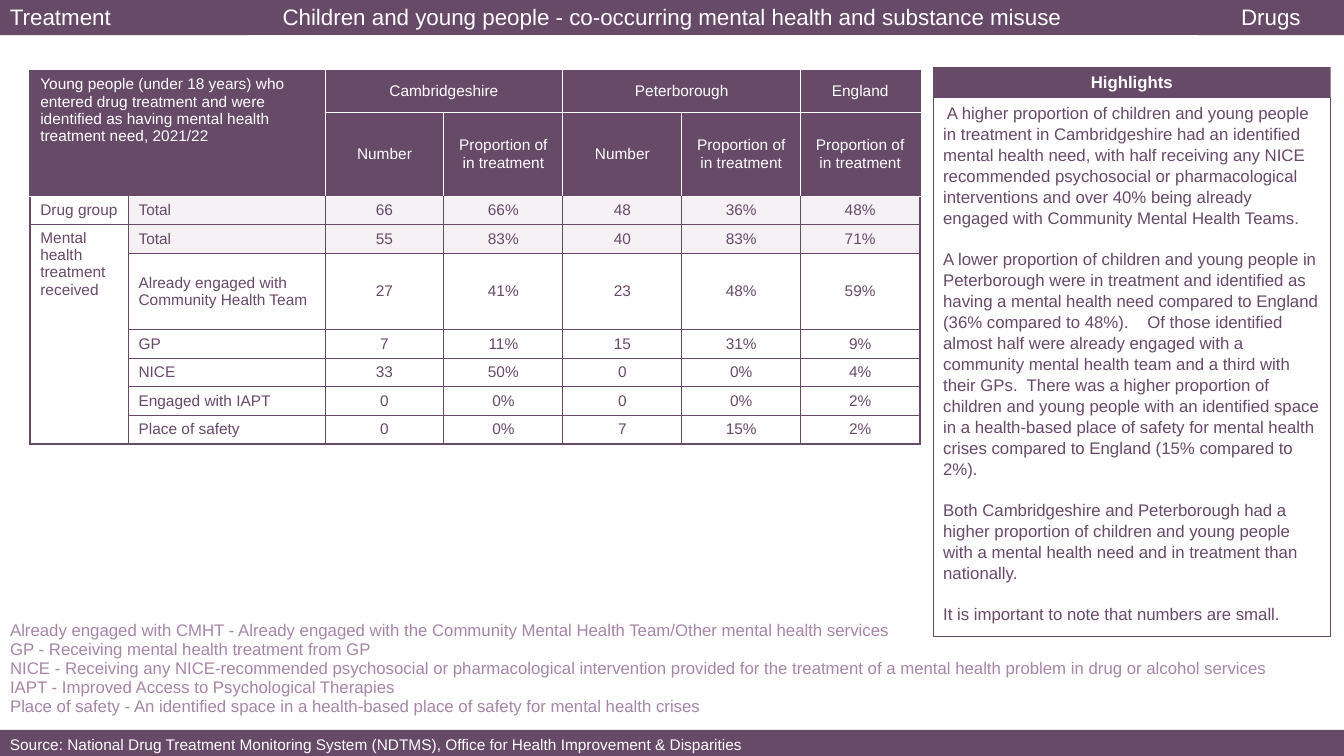
import pptx
import pptx.util
import pptx.dml.color
import pptx.enum.text
import pptx.enum.shapes
import pptx.oxml
import pptx.oxml.ns

COLOURS = {"plum": "674A68", "mauve": "A686A6", "tint": "F5F1F5", "white": "FFFFFF"}
ALIGN = pptx.enum.text.PP_ALIGN
ANCHOR = pptx.enum.text.MSO_ANCHOR
BAR = {"colour": "white", "size": 16}
THIN, THICK = 0.75, 1.5


def rgb(colour):
    return pptx.dml.color.RGBColor.from_string(COLOURS[colour])


class Sheet:
    """Slide style on a grid of 160 columns by 90 rows."""

    font = "Arial"
    columns, rows = 160, 90

    def __init__(self, deck):
        self.slide = deck.slides.add_slide(deck.slide_layouts[5])
        self.column = deck.slide_width / self.columns
        self.row = deck.slide_height / self.rows

    def box(self, left, top, width, height):
        return [int(n) for n in (left * self.column, top * self.row,
                                 width * self.column, height * self.row)]

    def set_text(self, frame, paragraphs, colour="plum", size=12, bold=False,
                 align=ALIGN.LEFT, gap=0, spacing=1.0):
        for index, words in enumerate(paragraphs):
            paragraph = frame.paragraphs[0] if index == 0 else frame.add_paragraph()
            paragraph.text = words
            layout = {"alignment": align, "line_spacing": spacing,
                      "space_before": pptx.util.Pt(gap if index else 0)}
            for name, value in layout.items():
                setattr(paragraph, name, value)
            letters = {"name": self.font, "size": pptx.util.Pt(size), "bold": bold}
            for run in paragraph.runs:
                for name, value in letters.items():
                    setattr(run.font, name, value)
                run.font.color.rgb = rgb(colour)

    def set_frame(self, frame, anchor):
        settings = {"word_wrap": True, "vertical_anchor": anchor,
                    "auto_size": pptx.enum.text.MSO_AUTO_SIZE.NONE}
        for name, value in settings.items():
            setattr(frame, name, value)

    def title(self, place, words):
        heading = self.slide.shapes.title
        for name, value in zip(("left", "top", "width", "height"), self.box(*place)):
            setattr(heading, name, value)
        heading.fill.solid()
        heading.fill.fore_color.rgb = rgb("plum")
        self.set_frame(heading.text_frame, ANCHOR.MIDDLE)
        self.set_text(heading.text_frame, [words], align=ALIGN.CENTER, **BAR)

    def panel(self, place, paragraphs, fill=None, anchor=ANCHOR.MIDDLE, **style):
        panel = self.slide.shapes.add_shape(
            pptx.enum.shapes.MSO_SHAPE.RECTANGLE, *self.box(*place))
        panel.shadow.inherit = False
        if fill:
            panel.fill.solid()
            panel.fill.fore_color.rgb = rgb(fill)
            panel.line.fill.background()
        else:
            panel.fill.background()
            panel.line.color.rgb = rgb("plum")
            panel.line.width = pptx.util.Pt(THIN)
        self.set_frame(panel.text_frame, anchor)
        self.set_text(panel.text_frame, paragraphs, **style)

    def table(self, left, top, widths, heights):
        frame = self.slide.shapes.add_table(
            len(heights), len(widths),
            *self.box(left, top, sum(widths), sum(heights)))
        table = frame.table
        for name in ("first_row", "horz_banding"):
            setattr(table, name, False)
        for column, width in zip(table.columns, widths):
            column.width = int(width * self.column)
        for row, height in zip(table.rows, heights):
            row.height = int(height * self.row)
        return table

    def cell(self, cell, words, fill="white", anchor=ANCHOR.TOP, **style):
        cell.fill.solid()
        cell.fill.fore_color.rgb = rgb(fill)
        cell.vertical_anchor = anchor
        self.set_text(cell.text_frame, [words], **style)

    def borders(self, cell, edges):
        properties = cell._tc.get_or_add_tcPr()
        for index, (side, (colour, width)) in enumerate(edges.items()):
            properties.insert(index, pptx.oxml.parse_xml(
                f'<a:ln{side} {pptx.oxml.ns.nsdecls("a")} w="{int(width * 12700)}">'
                f'<a:solidFill><a:srgbClr val="{COLOURS[colour]}"/></a:solidFill>'
                f'</a:ln{side}>'))


def treatment_table(sheet):
    share = "Proportion of in treatment"
    need = ("Young people (under 18 years) who entered drug treatment and were "
            "identified as having mental health treatment need, 2021/22")
    content = [
        [need, "", "Cambridgeshire", "", "Peterborough", "", "England"],
        ["", "", "Number", share, "Number", share, share],
        ["Drug group", "Total", "66", "66%", "48", "36%", "48%"],
        ["Mental health treatment received", "Total", "55", "83%", "40", "83%", "71%"],
        ["", "Already engaged with Community Health Team", "27", "41%", "23", "48%", "59%"],
        ["", "GP", "7", "11%", "15", "31%", "9%"],
        ["", "NICE", "33", "50%", "0", "0%", "4%"],
        ["", "Engaged with IAPT", "0", "0%", "0", "0%", "2%"],
        ["", "Place of safety", "0", "0%", "7", "15%", "2%"],
    ]
    line = 3.4
    table = sheet.table(3.6, 8.45, [11.7, 23.4] + [14.16] * 5,
                        [4.9, 10, line, line, 9.1] + [line] * 4)
    for first, last in (((0, 0), (1, 1)), ((0, 2), (0, 3)),
                        ((0, 4), (0, 5)), ((3, 0), (8, 0))):
        table.cell(*first).merge(table.cell(*last))

    bottom, right = len(content) - 1, len(content[0]) - 1
    outer, inner, pale = ("plum", THICK), ("plum", THIN), ("white", THIN)
    for r, words_in_row in enumerate(content):
        for c, words in enumerate(words_in_row):
            cell = table.cell(r, c)
            header, total = r < 2, r in (2, 3) and c > 0
            sheet.cell(cell, words, size=11,
                       fill="plum" if header else "tint" if total else "white",
                       colour="white" if header else "plum",
                       anchor=ANCHOR.MIDDLE if c else ANCHOR.TOP,
                       align=ALIGN.CENTER if c > 1 else ALIGN.LEFT)
            # Outer edges are thick, header rules are white
            last_row = r + cell.span_height - 1 if cell.is_merge_origin else r
            last_column = c + cell.span_width - 1 if cell.is_merge_origin else c
            side = pale if header else inner
            sheet.borders(cell, {
                "L": outer if c == 0 else side,
                "R": outer if last_column == right else side,
                "T": outer if r == 0 else pale if r <= 2 else inner,
                "B": outer if last_row == bottom else pale if last_row < 2 else inner})


def main():
    deck = pptx.Presentation()
    deck.slide_width = pptx.util.Inches(13.33)
    deck.slide_height = pptx.util.Inches(7.5)
    sheet = Sheet(deck)

    # Header bar
    sheet.title((0, -0.25, 160, 4.4), "Children and young people - co-occurring "
                "mental health and substance misuse")
    sheet.panel((0, -0.25, 29.6, 4.45), ["Treatment"], fill="plum", **BAR)
    sheet.panel((142.6, -0.25, 17.4, 4.45), ["Drugs"], fill="plum",
                align=ALIGN.CENTER, **BAR)

    # Abbreviations
    notes = sheet.table(0, 73.4, [160], [13.2])
    sheet.cell(notes.cell(0, 0), "\v".join([
        "Already engaged with CMHT - Already engaged with the Community Mental Health "
        "Team/Other mental health services",
        "GP - Receiving mental health treatment from GP",
        "NICE - Receiving any NICE-recommended psychosocial or pharmacological intervention "
        "provided for the treatment of a mental health problem in drug or alcohol services",
        "IAPT - Improved Access to Psychological Therapies",
        "Place of safety - An identified space in a health-based place of safety for "
        "mental health crises"]), colour="mauve")

    # Highlights
    sheet.panel((111.1, 11.6, 47.3, 64.2), [
        " A higher proportion of children and young people in treatment in Cambridgeshire "
        "had an identified mental health need, with half receiving any NICE recommended "
        "psychosocial or pharmacological interventions and over 40% being already engaged "
        "with Community Mental Health Teams.",
        "A lower proportion of children and young people in Peterborough were in treatment "
        "and identified as having a mental health need compared to England (36% compared "
        "to 48%).    Of those identified almost half were already engaged with a community "
        "mental health team and a third with their GPs.  There was a higher proportion of "
        "children and young people with an identified space in a health-based place of "
        "safety for mental health crises compared to England (15% compared to 2%).",
        "Both Cambridgeshire and Peterborough had a higher proportion of children and young "
        "people with a mental health need and in treatment than nationally.",
        "It is important to note that numbers are small."],
        anchor=ANCHOR.TOP, gap=14.4, spacing=1.04)
    sheet.panel((111.1, 8, 47.3, 3.6), ["Highlights"], fill="plum", colour="white",
                bold=True, align=ALIGN.CENTER)

    # Source bar and data
    sheet.panel((0, 86.9, 160, 3.5), ["Source: National Drug Treatment Monitoring System "
                "(NDTMS), Office for Health Improvement & Disparities"],
                fill="plum", colour="white", size=11)
    treatment_table(sheet)

    deck.save("out.pptx")


if __name__ == "__main__":
    main()
